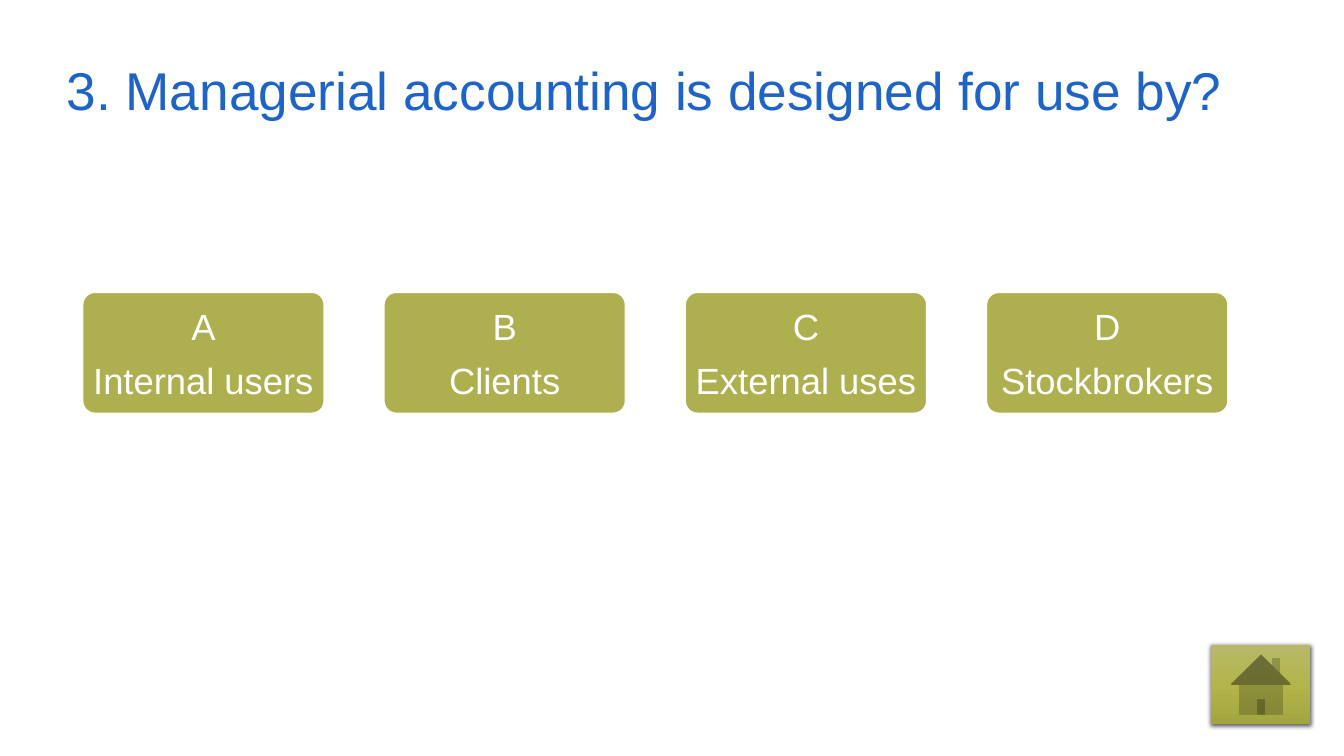
import pptx
import pptx.util
import pptx.oxml
import pptx.oxml.ns
from pptx.dml.color import RGBColor
from pptx.enum.shapes import MSO_SHAPE
from pptx.enum.text import MSO_ANCHOR, PP_ALIGN
from pptx.util import Inches

QUESTION = "3. Managerial accounting is designed for use by?"
ANSWERS = [
    ("A", "Internal users"),
    ("B", "Clients"),
    ("C", "External uses"),
    ("D", "Stockbrokers"),
]

THEME = {
    "font": "Arial",
    "question_size": 54,
    "answer_size": 37,
    "question": "1E64C8",
    "card": "AEB050",
    "white": "FFFFFF",
    "home_gradient": ("B7B969", "B3B54B", "A3A53E"),
}

CARD_LEFT, CARD_TOP = 1.17, 4.13
CARD_WIDTH, CARD_HEIGHT = 3.4, 1.7
CARD_PITCH = 1.25 * CARD_WIDTH


def set_frame(frame, anchor, left, top, right, bottom):
    frame.word_wrap = True
    frame.vertical_anchor = anchor
    frame.margin_left, frame.margin_top = Inches(left), Inches(top)
    frame.margin_right, frame.margin_bottom = Inches(right), Inches(bottom)


def add_run(paragraph, text, size, color):
    paragraph.line_spacing = 0.9
    run = paragraph.add_run()
    run.text = text
    run.font.name = THEME["font"]
    run.font.size = pptx.util.Pt(size)
    run.font.color.rgb = RGBColor.from_string(color)


def add_question(slide):
    question = slide.shapes.add_textbox(
        Inches(0.87), Inches(0.83), Inches(17.18), Inches(0.94))
    set_frame(question.text_frame, MSO_ANCHOR.BOTTOM, 0.07, 0.05, 0.07, 0.05)
    add_run(question.text_frame.paragraphs[0], QUESTION,
            THEME["question_size"], THEME["question"])


def add_answer(slide, index, lines):
    card = slide.shapes.add_shape(
        MSO_SHAPE.ROUNDED_RECTANGLE,
        Inches(CARD_LEFT + index * CARD_PITCH), Inches(CARD_TOP),
        Inches(CARD_WIDTH), Inches(CARD_HEIGHT))
    card.adjustments[0] = 0.1
    card.shadow.inherit = False
    card.fill.solid()
    card.fill.fore_color.rgb = RGBColor.from_string(THEME["card"])
    card.line.color.rgb = RGBColor.from_string(THEME["white"])
    card.line.width = pptx.util.Pt(1)

    frame = card.text_frame
    set_frame(frame, MSO_ANCHOR.MIDDLE, 0.08, 0.13, 0.08, 0.05)
    for number, line in enumerate(lines):
        paragraph = frame.paragraphs[0] if number == 0 else frame.add_paragraph()
        paragraph.alignment = PP_ALIGN.CENTER
        paragraph.space_after = pptx.util.Pt(14.5)
        add_run(paragraph, line, THEME["answer_size"], THEME["white"])


def add_home_button(slide):
    home = slide.shapes.add_shape(
        MSO_SHAPE.ACTION_BUTTON_HOME,
        Inches(17.09), Inches(9.1), Inches(1.4), Inches(1.12))
    home.line.fill.background()
    home.shadow.inherit = False
    properties = home.fill._xPr
    namespace = pptx.oxml.ns.nsdecls("a")

    # Three-stop vertical gradient
    stops = "".join(
        f'<a:gs pos="{step * 50000}"><a:srgbClr val="{color}"/></a:gs>'
        for step, color in enumerate(THEME["home_gradient"]))
    gradient = pptx.oxml.parse_xml(
        f'<a:gradFill {namespace} rotWithShape="1"><a:gsLst>{stops}</a:gsLst>'
        '<a:lin ang="5400000" scaled="0"/></a:gradFill>')
    properties.find(pptx.oxml.ns.qn("a:prstGeom")).addnext(gradient)

    # Soft shadow below the button
    shadow = pptx.oxml.parse_xml(
        f'<a:outerShdw {namespace} blurRad="{pptx.util.Pt(4.5)}" '
        f'dist="{pptx.util.Pt(1.5)}" dir="5400000" algn="ctr" rotWithShape="0">'
        '<a:srgbClr val="000000"><a:alpha val="63000"/></a:srgbClr></a:outerShdw>')
    properties.find(pptx.oxml.ns.qn("a:effectLst")).append(shadow)


def main():
    presentation = pptx.Presentation()
    presentation.slide_width = Inches(18.96)
    presentation.slide_height = Inches(10.67)
    slide = presentation.slides.add_slide(presentation.slide_layouts[6])
    slide.background.fill.solid()
    slide.background.fill.fore_color.rgb = RGBColor.from_string(THEME["white"])

    add_question(slide)
    add_home_button(slide)
    for index, lines in enumerate(ANSWERS):
        add_answer(slide, index, lines)

    presentation.save("out.pptx")


if __name__ == "__main__":
    main()
